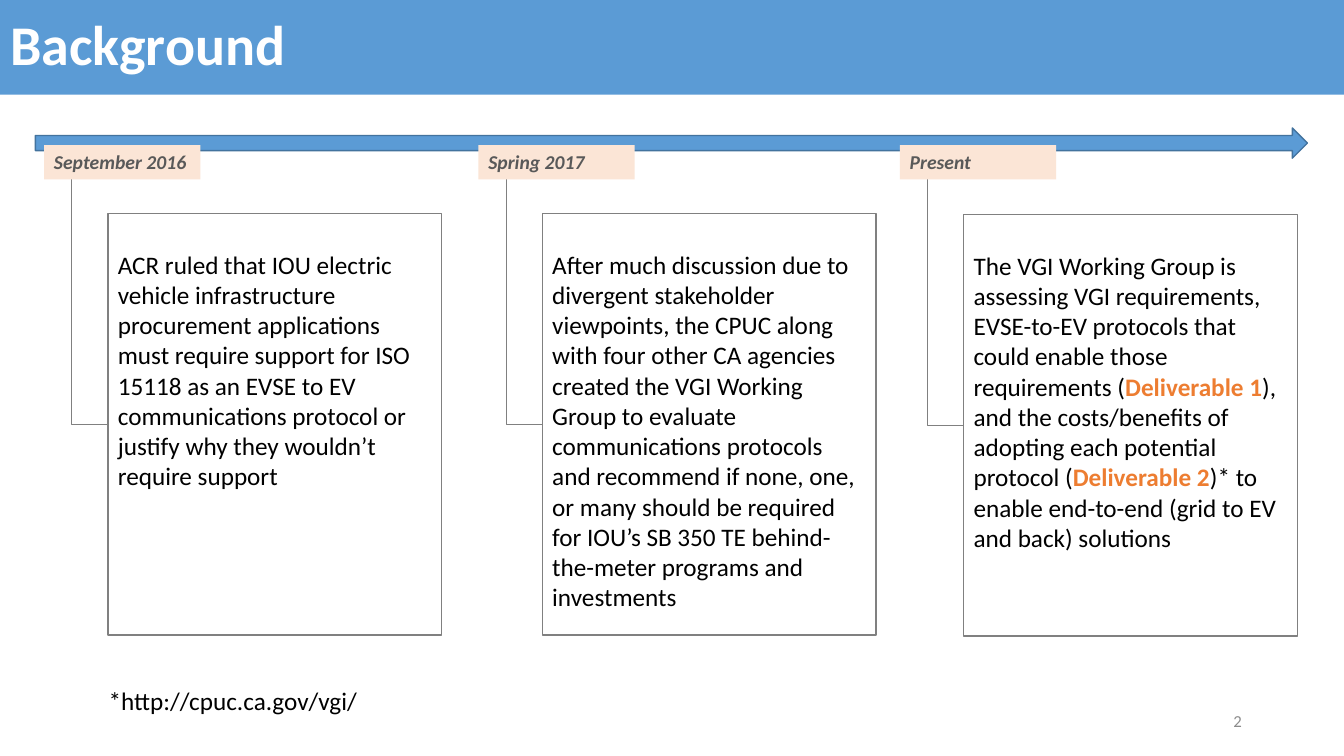
from dataclasses import dataclass

from lxml import etree
from pptx import Presentation, util as u
from pptx.dml.color import RGBColor
from pptx.enum import shapes, text
from pptx.oxml.ns import qn


@dataclass(frozen=True)
class Theme:
    font: str = "Calibri"
    blue: str = "5B9BD5"
    blue_edge: str = "43739E"
    peach: str = "FBE5D6"
    orange: str = "ED7D31"
    grey: str = "808080"
    label_text: str = "595959"
    number_text: str = "8C8C8C"
    black: str = "000000"
    white: str = "FFFFFF"
    title_size: int = 40
    body_size: int = 18
    label_size: int = 14
    number_size: int = 12


def write(sp, runs, *, font, size, color, bold=False, italic=False, accent=None,
          align=text.PP_ALIGN.LEFT, anchor=text.MSO_ANCHOR.TOP, top=0.05, spacing=1.0):
    tf = sp.text_frame
    tf.word_wrap = True
    tf.auto_size = text.MSO_AUTO_SIZE.NONE
    tf.vertical_anchor = anchor
    tf.margin_left = tf.margin_right = u.Inches(0.1)
    tf.margin_top, tf.margin_bottom = u.Inches(top), u.Inches(0.05)
    p = tf.paragraphs[0]
    p.alignment, p.line_spacing = align, spacing
    for i, words in enumerate(runs):
        strong = i % 2 == 1
        r = p.add_run()
        r.text = words
        r.font.name, r.font.size = font, u.Pt(size)
        r.font.bold, r.font.italic = bold or strong, italic
        r.font.color.rgb = RGBColor.from_string(accent if strong else color)


class Deck:
    def __init__(self, theme):
        self.t = theme
        self.prs = Presentation()
        self.prs.slide_width, self.prs.slide_height = u.Inches(13.33), u.Inches(7.5)
        self.s = self.prs.slides.add_slide(self.prs.slide_layouts[5])

    def x(self, percent):
        return round(self.prs.slide_width * percent / 100)

    def y(self, percent):
        return round(self.prs.slide_height * percent / 100)

    def box(self, x, y, w, h):
        return self.x(x), self.y(y), self.x(w), self.y(h)

    def title(self, words, height):
        sp = self.s.shapes.title
        sp.left, sp.top, sp.width, sp.height = self.box(0, 0, 100, height)
        sp.fill.solid()
        sp.fill.fore_color.rgb = RGBColor.from_string(self.t.blue)
        write(sp, [words], font=self.t.font, size=self.t.title_size, color=self.t.white,
              bold=True, anchor=text.MSO_ANCHOR.MIDDLE, spacing=0.9)

    def shape(self, kind, at, fill=None, line=None):
        sp = self.s.shapes.add_shape(kind, *self.box(*at))
        sp.shadow.inherit = False
        if fill:
            sp.fill.solid()
            sp.fill.fore_color.rgb = RGBColor.from_string(fill)
        else:
            sp.fill.background()
        if line:
            sp.line.color.rgb = RGBColor.from_string(line)
            sp.line.width = u.Pt(1)
        else:
            sp.line.fill.background()
        return sp

    def note(self, words, at, **fmt):
        sp = self.s.shapes.add_textbox(*self.box(*at))
        write(sp, [words], font=self.t.font, **fmt)

    def timeline(self, at):
        self.shape(shapes.MSO_SHAPE.RIGHT_ARROW, at, self.t.blue, self.t.blue_edge)

    def card(self, runs, at):
        sp = self.shape(shapes.MSO_SHAPE.RECTANGLE, at, line=self.t.grey)
        write(sp, runs, font=self.t.font, size=self.t.body_size, color=self.t.black,
              accent=self.t.orange, top=0.35)

    def label(self, words, at):
        sp = self.shape(shapes.MSO_SHAPE.RECTANGLE, at, self.t.peach)
        write(sp, [words], font=self.t.font, size=self.t.label_size,
              color=self.t.label_text, bold=True, italic=True)

    def elbow(self, x1, y1, x2, y2):
        run, drop = self.x(x2 - x1), self.y(y2 - y1)
        left = self.x(x1) + (run - drop) // 2
        top = self.y(y1) + (drop - run) // 2
        c = self.s.shapes.add_connector(shapes.MSO_CONNECTOR.ELBOW,
                                        left + drop, top, left, top + run)
        c.line.color.rgb = RGBColor.from_string(self.t.grey)
        c.line.width = u.Pt(0.5)
        spPr = c._element.spPr
        spPr.find(qn("a:xfrm")).set("rot", "16200000")
        spPr.find(qn("a:prstGeom")).set("prst", "bentConnector2")
        etree.SubElement(spPr, qn("a:effectLst"))

    def milestone(self, date, runs, x, y):
        width, height = 24.83, 55.73
        label_y, label_w, label_h = 19.2, 11.63, 4.53
        self.card(runs, (x, y, width, height))
        self.elbow(x - 2.7, label_y + label_h / 2, x, y + height / 2)
        self.label(date, (x - 4.75, label_y, label_w, label_h))


MILESTONES = [
    ("September 2016", 8.03, 28.27, [
        "ACR ruled that IOU electric vehicle infrastructure procurement applications "
        "must require support for ISO 15118 as an EVSE to EV communications protocol "
        "or justify why they wouldn’t require support"]),
    ("Spring 2017", 40.35, 28.27, [
        "After much discussion due to divergent stakeholder viewpoints, the CPUC along "
        "with four other CA agencies created the VGI Working Group to evaluate "
        "communications protocols and recommend if none, one, or many should be "
        "required for IOU’s SB 350 TE behind-the-meter programs and investments"]),
    ("Present", 71.7, 28.4, [
        "The VGI Working Group is assessing VGI requirements, EVSE-to-EV protocols "
        "that could enable those requirements (", "Deliverable 1",
        "), and the costs/benefits of adopting each potential protocol (",
        "Deliverable 2", ")* to enable end-to-end (grid to EV and back) solutions"]),
]


def main():
    t = Theme()
    deck = Deck(t)
    deck.title("Background", 12.53)
    deck.note("2", (70.65, 92.67, 22.5, 5.33), size=t.number_size, color=t.number_text,
              align=text.PP_ALIGN.RIGHT, anchor=text.MSO_ANCHOR.MIDDLE)
    deck.note("*http://cpuc.ca.gov/vgi/", (7.35, 90, 77.8, 5.33),
              size=t.body_size, color=t.black)
    deck.timeline((2.63, 16.93, 94.65, 4))
    for date, x, y, runs in MILESTONES:
        deck.milestone(date, runs, x, y)
    deck.prs.save("out.pptx")


if __name__ == "__main__":
    main()
